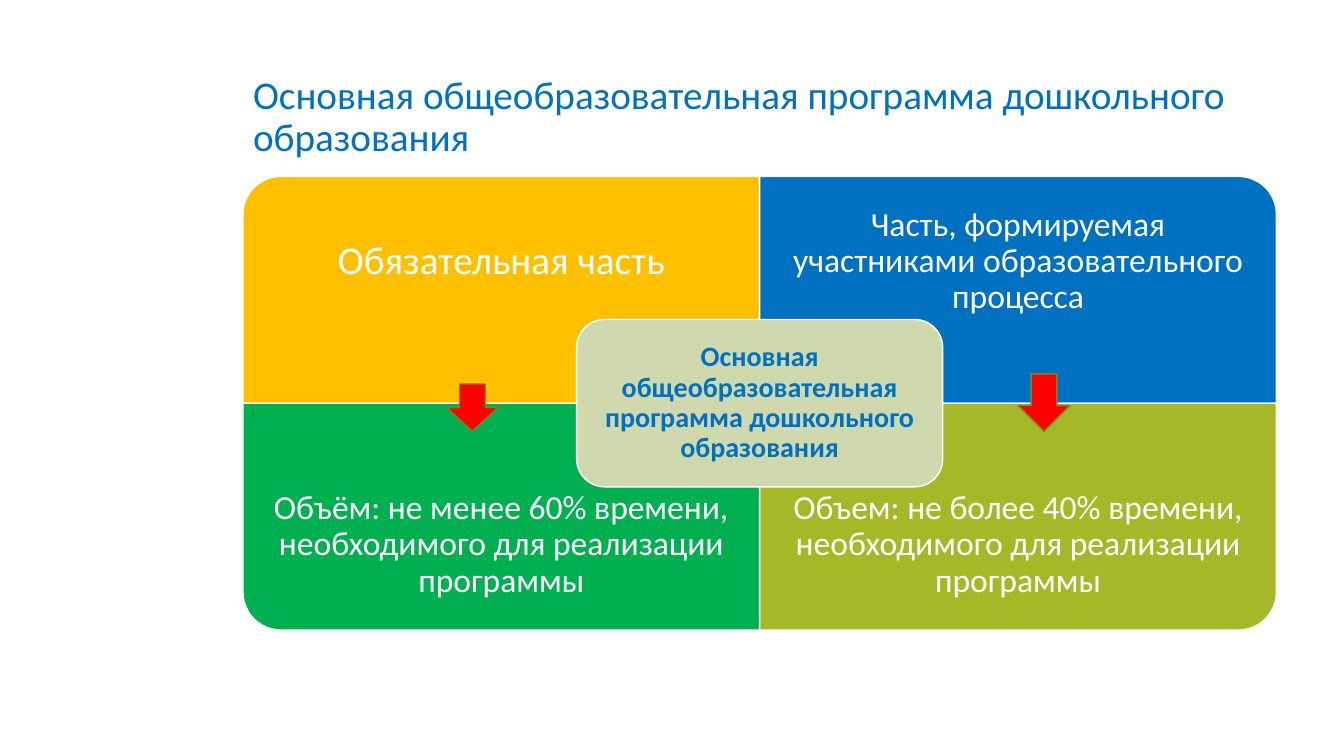
import dataclasses

import pptx
import pptx.dml.color
import pptx.enum.shapes
import pptx.enum.text
import pptx.util

Inches = pptx.util.Inches
SHAPE = pptx.enum.shapes.MSO_SHAPE
ALIGN = pptx.enum.text.PP_ALIGN
ANCHOR = pptx.enum.text.MSO_ANCHOR


@dataclasses.dataclass(frozen=True)
class Theme:
    font: str = "Calibri"
    white: str = "FFFFFF"
    blue: str = "0070C0"
    amber: str = "FFC000"
    green: str = "00B050"
    olive: str = "A6B727"
    pale_olive: str = "D0D8AD"
    red: str = "FF0000"
    dark_olive: str = "7B871D"
    heading: int = 28
    body: int = 24
    center: int = 20


theme = Theme()


def write_text(frame, text, size, color, inset=None, align=ALIGN.CENTER,
               anchor=ANCHOR.MIDDLE, bold=False):
    frame.word_wrap = True
    frame.auto_size = pptx.enum.text.MSO_AUTO_SIZE.NONE
    frame.vertical_anchor = anchor
    if inset is not None:
        frame.margin_left = frame.margin_right = Inches(inset)
        frame.margin_top = frame.margin_bottom = Inches(inset)
    frame.text = text
    paragraph = frame.paragraphs[0]
    paragraph.alignment = align
    paragraph.line_spacing = 0.9
    paragraph.font.name = theme.font
    paragraph.font.size = pptx.util.Pt(size)
    paragraph.font.bold = bold
    paragraph.font.color.rgb = pptx.dml.color.RGBColor.from_string(color)


def add_block(kind, left, top, width, height, fill, line):
    block = slide.shapes.add_shape(
        kind, Inches(left), Inches(top), Inches(width), Inches(height))
    block.shadow.inherit = False
    block.fill.solid()
    block.fill.fore_color.rgb = pptx.dml.color.RGBColor.from_string(fill)
    block.line.color.rgb = pptx.dml.color.RGBColor.from_string(line)
    block.line.width = pptx.util.Pt(1)
    return block


presentation = pptx.Presentation()
presentation.slide_width = Inches(13.33)
presentation.slide_height = Inches(7.5)
slide = presentation.slides.add_slide(presentation.slide_layouts[5])

# Two by two grid
grid_left, grid_top = 2.41, 1.75
column, row = 5.125, 2.25
middle_x, middle_y = grid_left + column, grid_top + row

title = slide.shapes.title
title.left, title.top = Inches(grid_left), Inches(0.33)
title.width, title.height = Inches(2 * column), Inches(1.31)
write_text(title.text_frame,
           "Основная общеобразовательная программа дошкольного образования",
           theme.heading, theme.blue, align=ALIGN.LEFT, anchor=ANCHOR.BOTTOM)

# Column, row, turn of the rounded corner, fill, type size, inset, wording
quadrants = [
    (0, 0, 270, theme.amber, theme.heading, 0.22, "Обязательная часть"),
    (1, 0, 0, theme.blue, theme.body, 0.19,
     "Часть, формируемая участниками образовательного процесса"),
    (0, 1, 180, theme.green, theme.body, 0.19,
     "Объём: не менее 60% времени, необходимого для реализации программы"),
    (1, 1, 90, theme.olive, theme.body, 0.19,
     "Объем: не более 40% времени, необходимого для реализации программы"),
]
label_height = 0.75 * row
for across, down, turn, fill, size, inset, wording in quadrants:
    left, top = grid_left + across * column, grid_top + down * row
    # A quarter turn swaps the sides about the quadrant's centre
    width, height = (row, column) if turn % 180 else (column, row)
    quadrant = add_block(SHAPE.ROUND_1_RECTANGLE,
                         left + (column - width) / 2, top + (row - height) / 2,
                         width, height, fill, theme.white)
    quadrant.rotation = turn
    label = slide.shapes.add_textbox(
        Inches(left), Inches(top + down * (row - label_height)),
        Inches(column), Inches(label_height))
    write_text(label.text_frame, wording, size, theme.white, inset)

center_width, center_height = 3.63, 1.66
program = add_block(SHAPE.ROUNDED_RECTANGLE,
                    middle_x - center_width / 2, middle_y - center_height / 2,
                    center_width, center_height, theme.pale_olive, theme.white)
write_text(program.text_frame,
           "Основная общеобразовательная программа дошкольного образования",
           theme.center, theme.blue, inset=0.16, bold=True)

arrow_width, arrow_bottom = 0.51, 4.28
for arrow_left, arrow_height in [(4.43, 0.47), (10.1, 0.57)]:
    add_block(SHAPE.DOWN_ARROW, arrow_left, arrow_bottom - arrow_height,
              arrow_width, arrow_height, theme.red, theme.dark_olive)

presentation.save("out.pptx")
